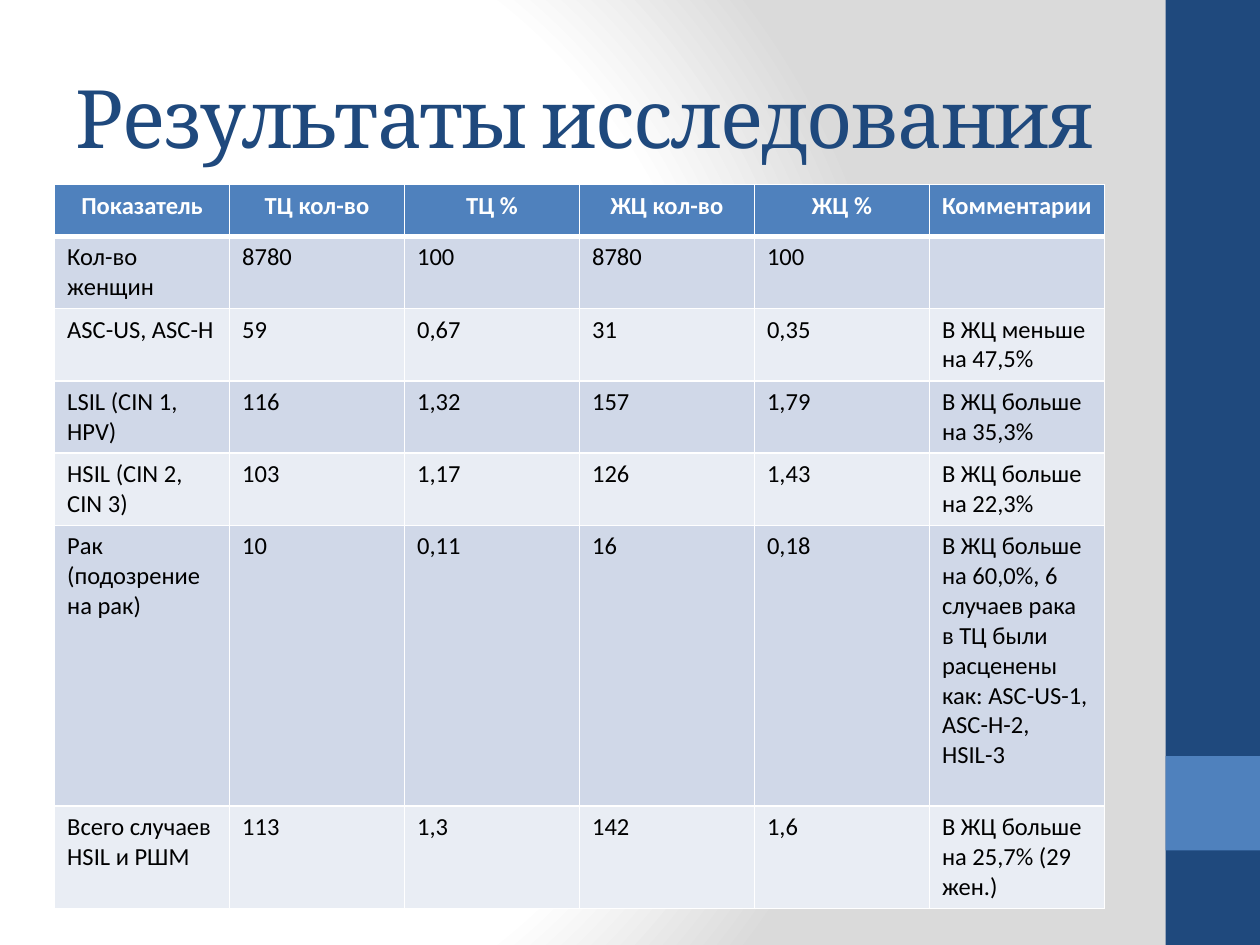
"""Build a slide with a table comparing study results."""
from dataclasses import dataclass

from pptx import Presentation
from pptx import util as u
from pptx.dml.color import RGBColor
from pptx.enum import shapes, text
from pptx.oxml import parse_xml
from pptx.oxml.ns import nsdecls


@dataclass(frozen=True)
class Theme:
    navy: str = "1F497D"
    blue: str = "4F81BD"
    white: str = "FFFFFF"
    black: str = "000000"
    haze: str = "DADADA"
    bands: tuple = ("D0D8E8", "E9EDF4")
    heading_font: str = "Cambria"
    body_font: str = "Calibri"
    heading_size: float = 46
    body_size: float = 14


def write(frame, content, *, font, size, color, bold=False, align=text.PP_ALIGN.LEFT, spacing=0):
    paragraph = frame.paragraphs[0]
    paragraph.alignment = align
    paragraph.font.size = u.Pt(size)
    if not content:
        return
    run = paragraph.add_run()
    run.text = content
    run.font.name, run.font.size, run.font.bold = font, u.Pt(size), bold
    run.font.color.rgb = RGBColor.from_string(color)
    if spacing:
        run.font._element.set("spc", str(round(spacing * 100)))


class ResultsSlide:
    def __init__(self, deck, theme):
        self.theme = theme
        self.slide = deck.slides.add_slide(deck.slide_layouts[5])

    def background(self):
        stops = ((0, self.theme.white), (75, self.theme.white), (100, self.theme.haze))
        stop_xml = "".join(
            f'<a:gs pos="{place * 1000}"><a:srgbClr val="{color}"/></a:gs>' for place, color in stops
        )
        self.slide.element.cSld.insert(0, parse_xml(
            f'<p:bg {nsdecls("p", "a")}><p:bgPr><a:gradFill rotWithShape="1">'
            f'<a:gsLst>{stop_xml}</a:gsLst><a:path path="circle">'
            '<a:fillToRect l="20000" t="50000" r="100000" b="50000"/></a:path>'
            '</a:gradFill><a:effectLst/></p:bgPr></p:bg>'
        ))

    def panel(self, left, top, width, height, color):
        panel = self.slide.shapes.add_shape(
            shapes.MSO_SHAPE.RECTANGLE, *map(u.Pt, (left, top, width, height))
        )
        panel.shadow.inherit = False
        panel.fill.solid()
        panel.fill.fore_color.rgb = RGBColor.from_string(color)
        panel.line.fill.background()

    def title(self, content, left, top, width, height):
        heading = self.slide.shapes.title
        heading.left, heading.top, heading.width, heading.height = map(
            u.Pt, (left, top, width, height)
        )
        frame = heading.text_frame
        frame.word_wrap = True
        frame.auto_size = text.MSO_AUTO_SIZE.NONE
        frame.vertical_anchor = text.MSO_ANCHOR.MIDDLE
        write(frame, content, font=self.theme.heading_font, size=self.theme.heading_size,
              color=self.theme.navy, spacing=-1)

    def borders(self, cell, top, bottom):
        properties = cell._tc.get_or_add_tcPr()
        for index, (side, width) in enumerate(zip("LRTB", (1, 1, top, bottom))):
            properties.insert(index, parse_xml(
                f'<a:ln{side} {nsdecls("a")} w="{u.Pt(width)}"><a:solidFill>'
                f'<a:srgbClr val="{self.theme.white}"/></a:solidFill></a:ln{side}>'
            ))

    def table(self, rows, heights, left, top, width):
        theme = self.theme
        grid = self.slide.shapes.add_table(
            len(rows), len(rows[0]), *map(u.Pt, (left, top, width, sum(heights)))
        ).table
        for row_index, (row, height) in enumerate(zip(rows, heights)):
            header = row_index == 0
            grid.rows[row_index].height = u.Pt(height)
            for column, content in enumerate(row):
                cell = grid.cell(row_index, column)
                cell.fill.solid()
                cell.fill.fore_color.rgb = RGBColor.from_string(
                    theme.blue if header else theme.bands[(row_index - 1) % 2]
                )
                self.borders(cell, top=3 if row_index == 1 else 1, bottom=3 if header else 1)
                write(cell.text_frame, content, font=theme.body_font, size=theme.body_size,
                      color=theme.white if header else theme.black, bold=header,
                      align=text.PP_ALIGN.CENTER if header else text.PP_ALIGN.LEFT)


def main():
    deck = Presentation()
    deck.slide_width, deck.slide_height = u.Pt(720), u.Pt(540)
    theme = Theme()
    results = ResultsSlide(deck, theme)
    results.background()
    results.panel(666, 0, 54, 540, theme.navy)
    results.panel(666, 432, 54, 54, theme.blue)
    results.title("Результаты исследования", 36, 21.6, 600, 90)
    findings = [
        ("Показатель", "ТЦ кол-во", "ТЦ %", "ЖЦ кол-во", "ЖЦ %", "Комментарии"),
        ("Кол-во женщин", "8780", "100", "8780", "100", ""),
        ("ASC-US, ASC-H", "59", "0,67", "31", "0,35", "В ЖЦ меньше на 47,5%"),
        ("LSIL (CIN 1, HPV)", "116", "1,32", "157", "1,79", "В ЖЦ больше на 35,3%"),
        ("HSIL (CIN 2, CIN 3)", "103", "1,17", "126", "1,43", "В ЖЦ больше на 22,3%"),
        ("Рак (подозрение на рак)", "10", "0,11", "16", "0,18",
         "В ЖЦ больше на 60,0%, 6 случаев рака в ТЦ были расценены как: "
         "ASC-US-1, ASC-H-2, HSIL-3"),
        ("Всего случаев HSIL и РШМ", "113", "1,3", "142", "1,6", "В ЖЦ больше на 25,7% (29 жен.)"),
    ]
    results.table(findings, [29.5, *[41.3] * 4, 160.5, 58.3], 31.2, 105.5, 600)
    deck.save("out.pptx")


if __name__ == "__main__":
    main()
